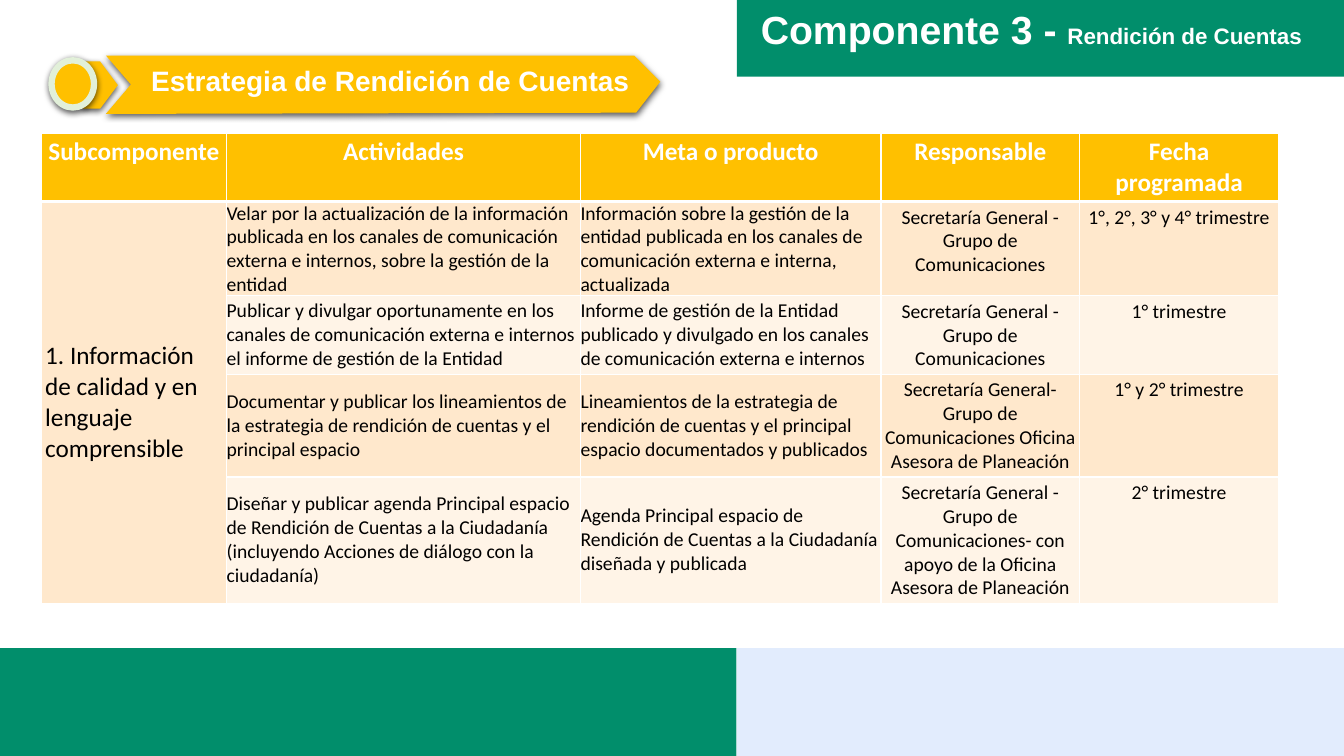
from lxml.etree import SubElement
from pptx import Presentation
from pptx.dml.color import RGBColor
from pptx.enum.shapes import MSO_SHAPE
from pptx.enum.text import MSO_ANCHOR, MSO_AUTO_SIZE, PP_ALIGN
from pptx.oxml import parse_xml
from pptx.oxml.ns import nsdecls, qn
from pptx.util import Cm, Pt

GREEN, PALE_BLUE, AMBER, MINT = "018E6B", "E2ECFD", "FFC000", "E2F0D9"
WHITE, BLACK, BANDS = "FFFFFF", "000000", ("FFE8CC", "FFF4E7")

COLUMN_WIDTHS = (4.67, 8.92, 7.57, 5.01, 5.01)
ROW_HEIGHTS = (1.7, 2.37, 1.98, 2.59, 3.18)
ROWS = (
    ("Subcomponente", "Actividades", "Meta o producto", "Responsable", "Fecha programada"),
    ("1. Información de calidad y en lenguaje comprensible",
     "Velar por la actualización de la información publicada en los canales de comunicación externa e internos, sobre la gestión de la entidad",
     "Información sobre la gestión de la entidad publicada en los canales de comunicación externa e interna, actualizada",
     "Secretaría General - Grupo de Comunicaciones", "1°, 2°, 3° y 4° trimestre"),
    ("", "Publicar y divulgar oportunamente en los canales de comunicación externa e internos el informe de gestión de la Entidad",
     "Informe de gestión de la Entidad publicado y divulgado en los canales de comunicación externa e internos",
     "Secretaría General - Grupo de Comunicaciones", "1° trimestre"),
    ("", "Documentar y publicar los lineamientos de la estrategia de rendición de cuentas y el principal espacio",
     "Lineamientos de la estrategia de rendición de cuentas y el principal espacio documentados y publicados",
     "Secretaría General- Grupo de Comunicaciones Oficina Asesora de Planeación", "1° y 2° trimestre"),
    ("", "Diseñar y publicar agenda Principal espacio de Rendición de Cuentas a la Ciudadanía (incluyendo Acciones de diálogo con la ciudadanía)",
     "Agenda Principal espacio de Rendición de Cuentas a la Ciudadanía diseñada y publicada",
     "Secretaría General - Grupo de Comunicaciones- con apoyo de la Oficina Asesora de Planeación", "2° trimestre"),
)


def color(value):
    return RGBColor.from_string(value)


def apply(target, values):
    for name, value in values.items():
        setattr(target, name, value)


class SlideBuilder:
    heading = {"name": "Arial", "bold": True}

    def __init__(self, page):
        self.page = page
        self.shapes = page.shapes

    def start_group(self):
        self.shapes = self.page.shapes.add_group_shape().shapes

    def end_group(self):
        self.shapes = self.page.shapes

    def span(self, para, text, size, ink, style):
        span = para.add_run()
        span.text = text
        apply(span.font, {**style, "size": Pt(size)})
        span.font.color.rgb = color(ink)

    def paint(self, shape, fill, outline=None, shadow=False):
        shape.fill.solid()
        shape.fill.fore_color.rgb = color(fill)
        if outline:
            shape.line.color.rgb = color(outline)
            shape.line.width = Pt(4.5)
        else:
            shape.line.fill.background()
        shape.shadow.inherit = False
        if shadow:
            effects = shape.element.spPr.find(qn("a:effectLst"))
            outer = SubElement(effects, qn("a:outerShdw"), blurRad=str(Pt(4.5)),
                               dist=str(Pt(1.5)), dir="5400000", rotWithShape="0")
            ink = SubElement(outer, qn("a:srgbClr"), val=BLACK)
            SubElement(ink, qn("a:alpha"), val="63000")

    def shape(self, kind, place, fill, **look):
        self.paint(self.shapes.add_shape(kind, *map(Cm, place)), fill, **look)

    def outline(self, points, fill, **look):
        corners = [(Cm(x), Cm(y)) for x, y in points]
        builder = self.shapes.build_freeform(*corners[0])
        builder.add_line_segments(corners[1:], close=True)
        self.paint(builder.convert_to_shape(), fill, **look)

    def fill_text(self, box, spans):
        apply(box.text_frame, {"word_wrap": True, "vertical_anchor": MSO_ANCHOR.TOP,
                               "auto_size": MSO_AUTO_SIZE.SHAPE_TO_FIT_TEXT})
        para = box.text_frame.paragraphs[0]
        para.alignment = PP_ALIGN.LEFT
        for text, size in spans:
            self.span(para, text, size, WHITE, self.heading)

    def title(self, place, spans):
        box = self.page.shapes.title
        apply(box, dict(zip(("left", "top", "width", "height"), map(Cm, place))))
        self.fill_text(box, spans)
        box.element.getparent().append(box.element)

    def label(self, place, spans):
        self.fill_text(self.shapes.add_textbox(*map(Cm, place)), spans)

    def borders(self, cell, row):
        widths = {"lnL": 1, "lnR": 1, "lnT": 3 if row == 1 else 1, "lnB": 3 if row == 0 else 1}
        properties = cell._tc.get_or_add_tcPr()
        for position, (side, width) in enumerate(widths.items()):
            properties.insert(position, parse_xml(
                f'<a:{side} {nsdecls("a")} w="{Pt(width)}"><a:solidFill>'
                f'<a:srgbClr val="{WHITE}"/></a:solidFill></a:{side}>'))

    def cell(self, cell, text, row, column):
        header, topic, wide = row == 0, column == 0, column in (1, 2)
        margin = Cm(0 if wide and not header else 0.1)
        sides = ("left", "right", "top", "bottom")
        apply(cell, {f"margin_{side}": margin for side in sides})
        middle = not header and (topic or wide)
        cell.vertical_anchor = MSO_ANCHOR.MIDDLE if middle else MSO_ANCHOR.TOP
        cell.fill.solid()
        cell.fill.fore_color.rgb = color(AMBER if header else BANDS[0 if topic else (row - 1) % 2])
        self.borders(cell, row)
        if text:
            para = cell.text_frame.paragraphs[0]
            para.alignment = PP_ALIGN.LEFT if middle else PP_ALIGN.CENTER
            self.span(para, text, 18 if header or topic else 14, WHITE if header else BLACK,
                      {"name": "Calibri", "bold": header})

    def table(self, left, top, rows, widths, heights):
        frame = self.shapes.add_table(len(rows), len(widths), Cm(left), Cm(top),
                                      Cm(sum(widths)), Cm(sum(heights)))
        table = frame.table
        for column, width in zip(table.columns, widths):
            column.width = Cm(width)
        for line, height in zip(table.rows, heights):
            line.height = Cm(height)
        table.cell(1, 0).merge(table.cell(len(rows) - 1, 0))
        for row, texts in enumerate(rows):
            for column, text in enumerate(texts):
                self.cell(table.cell(row, column), text, row, column)


def main():
    deck = Presentation()
    apply(deck, {"slide_width": Cm(33.87), "slide_height": Cm(19.05)})
    slide = SlideBuilder(deck.slides.add_slide(deck.slide_layouts[5]))

    slide.shape(MSO_SHAPE.RECTANGLE, (18.57, -0.03, 15.3, 1.96), GREEN)
    slide.shape(MSO_SHAPE.RECTANGLE, (-0.05, 16.33, 18.61, 2.72), GREEN)
    slide.shape(MSO_SHAPE.RECTANGLE, (18.57, 16.33, 15.3, 2.72), PALE_BLUE)
    slide.title((18.92, 0, 14.63, 1.45), (("Componente 3 - ", 28), ("Rendición de Cuentas", 16)))

    slide.start_group()
    ribbon = ((2.67, 1.4), (15.98, 1.4), (16.64, 2.06), (16.03, 2.84),
              (3.3, 2.87), (2.67, 2.87), (3.3, 2.13))
    slide.outline(ribbon, AMBER, shadow=True)
    slide.shape(MSO_SHAPE.PENTAGON, (2.08, 1.55, 0.89, 1.19), AMBER, shadow=True)
    slide.shape(MSO_SHAPE.OVAL, (1.3, 1.52, 1.07, 1.19), AMBER, outline=MINT, shadow=True)
    slide.label((3.56, 1.47, 14.58, 1.12), (("Estrategia de Rendición de Cuentas", 20),))
    slide.end_group()

    slide.table(1.04, 3.35, ROWS, COLUMN_WIDTHS, ROW_HEIGHTS)
    deck.save("out.pptx")


if __name__ == "__main__":
    main()
